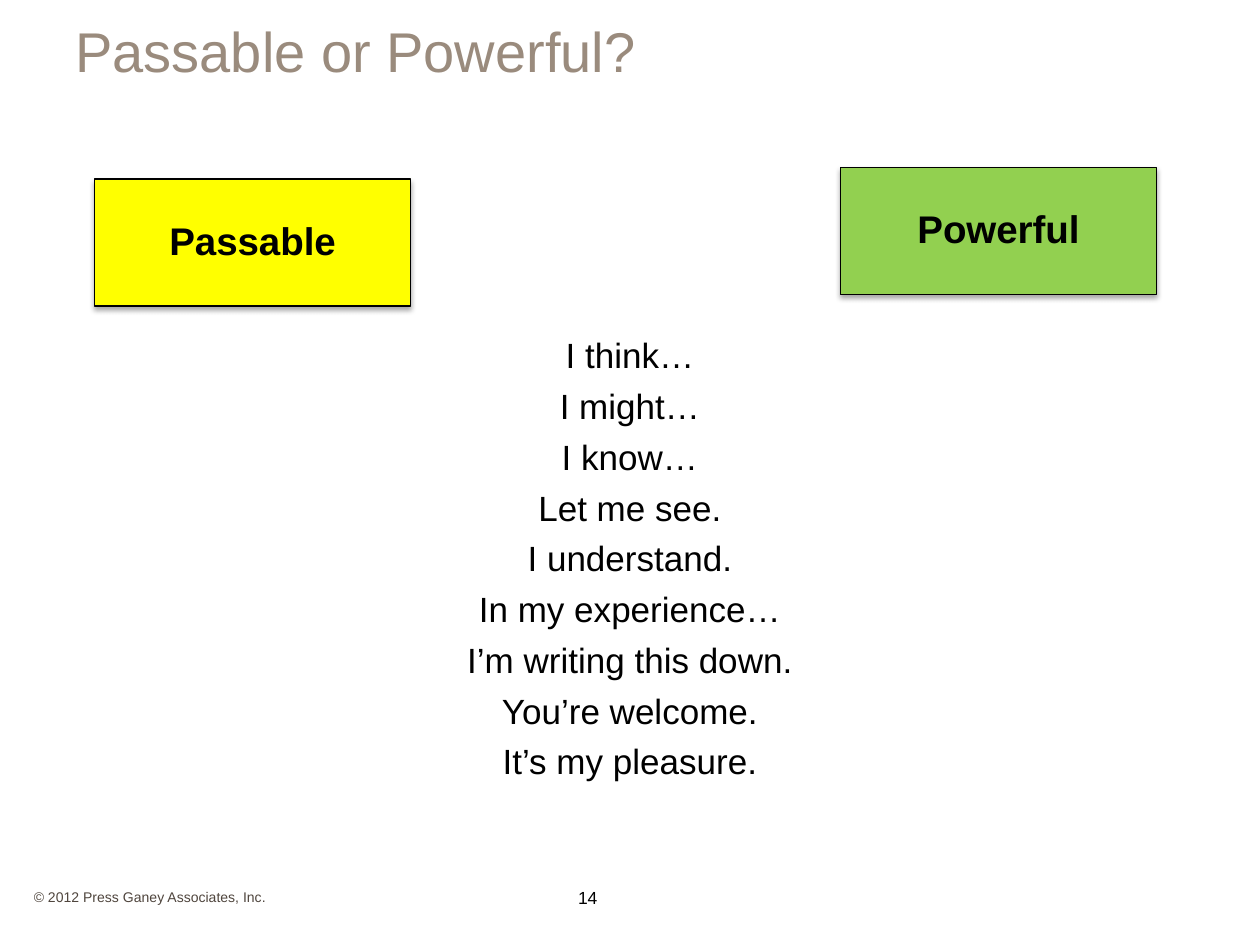
from dataclasses import dataclass

from lxml.etree import SubElement
from pptx import Presentation
from pptx.dml.color import RGBColor
from pptx.enum.shapes import MSO_SHAPE
from pptx.enum.text import MSO_ANCHOR, PP_ALIGN
from pptx.oxml.ns import qn
from pptx.util import Inches, Pt


@dataclass(frozen=True)
class Theme:
    """Colours, font and type sizes of the slide."""
    font: str = "Arial"
    ink: str = "000000"
    heading: str = "9A8B7D"
    muted: str = "4F453D"
    passable: str = "FFFF00"
    powerful: str = "92D050"
    title_size: int = 32
    card_size: int = 22
    body_size: int = 20
    number_size: int = 10
    copyright_size: int = 8


THEME = Theme()
PHRASES = [
    "I think…", "I might…", "I know…", "Let me see.", "I understand.",
    "In my experience…", "I’m writing this down.", "You’re welcome.", "It’s my pleasure.",
]


def write_text(frame, text, size, color=THEME.ink, bold=False, align=PP_ALIGN.LEFT,
               anchor=MSO_ANCHOR.MIDDLE, line_spacing=None, gap=0):
    """Fill a text frame with one paragraph per line of text."""
    frame.word_wrap = True
    frame.vertical_anchor = anchor
    for index, line in enumerate(text.split("\n")):
        para = frame.add_paragraph() if index else frame.paragraphs[0]
        para.alignment = align
        para.line_spacing = line_spacing
        para.space_before = Pt(gap if index else 0)
        span = para.add_run()
        span.text = line
        span.font.name = THEME.font
        span.font.size = Pt(size)
        span.font.bold = bold
        span.font.color.rgb = RGBColor.from_string(color)


def add_text(page, box, text, size, **options):
    """Add a text box in the given box."""
    frame = page.shapes.add_textbox(*map(Inches, box)).text_frame
    write_text(frame, text, size, **options)


def add_shadow(shape):
    """Give a shape a soft shadow falling straight down."""
    shape.shadow.inherit = False
    effects = shape._element.spPr.find(qn("a:effectLst"))
    shadow = SubElement(effects, qn("a:outerShdw"), blurRad=str(Pt(3.1)),
                        dist=str(Pt(1.8)), dir="5400000", rotWithShape="0")
    color = SubElement(shadow, qn("a:srgbClr"), val=THEME.ink)
    SubElement(color, qn("a:alpha"), val="35000")


def add_card(page, box, label, fill):
    """Add a category card with a bold centred label."""
    card = page.shapes.add_shape(MSO_SHAPE.RECTANGLE, *map(Inches, box))
    card.fill.solid()
    card.fill.fore_color.rgb = RGBColor.from_string(fill)
    card.line.color.rgb = RGBColor.from_string(THEME.ink)
    card.line.width = Pt(0.75)
    add_shadow(card)
    frame = card.text_frame
    frame.margin_left = frame.margin_right = Inches(0.17)
    frame.margin_top = frame.margin_bottom = Inches(0.1)
    write_text(frame, label, THEME.card_size, bold=True, align=PP_ALIGN.CENTER,
               line_spacing=0.9)


def add_title(page, box):
    """Add the slide title."""
    add_text(page, box, "Passable or Powerful?", THEME.title_size,
             color=THEME.heading, line_spacing=Pt(30))


def add_phrases(page, box):
    """Add the centred list of phrases to sort."""
    add_text(page, box, "\n".join(PHRASES), THEME.body_size, align=PP_ALIGN.CENTER,
             anchor=MSO_ANCHOR.TOP, gap=5)


def add_footer(page, box):
    """Add the copyright line and the page number."""
    left, top, width, height = box
    add_text(page, (left, top, width, height), "© 2012 Press Ganey Associates, Inc.",
             THEME.copyright_size, color=THEME.muted)
    add_text(page, (left + 3.33, top, width, height), "14", THEME.number_size,
             align=PP_ALIGN.CENTER)


def main():
    """Build and save the slide."""
    deck = Presentation()
    deck.slide_width, deck.slide_height = Inches(10), Inches(7.5)
    page = deck.slides.add_slide(deck.slide_layouts[6])
    add_title(page, (0.5, 0.08, 9, 0.75))
    add_phrases(page, (0.5, 2.6, 9, 4.07))
    add_footer(page, (0.17, 6.92, 2.33, 0.4))
    add_card(page, (0.75, 1.42, 2.51, 1.01), "Passable", THEME.passable)
    add_card(page, (6.67, 1.33, 2.51, 1.01), "Powerful", THEME.powerful)
    deck.save("out.pptx")


if __name__ == "__main__":
    main()
